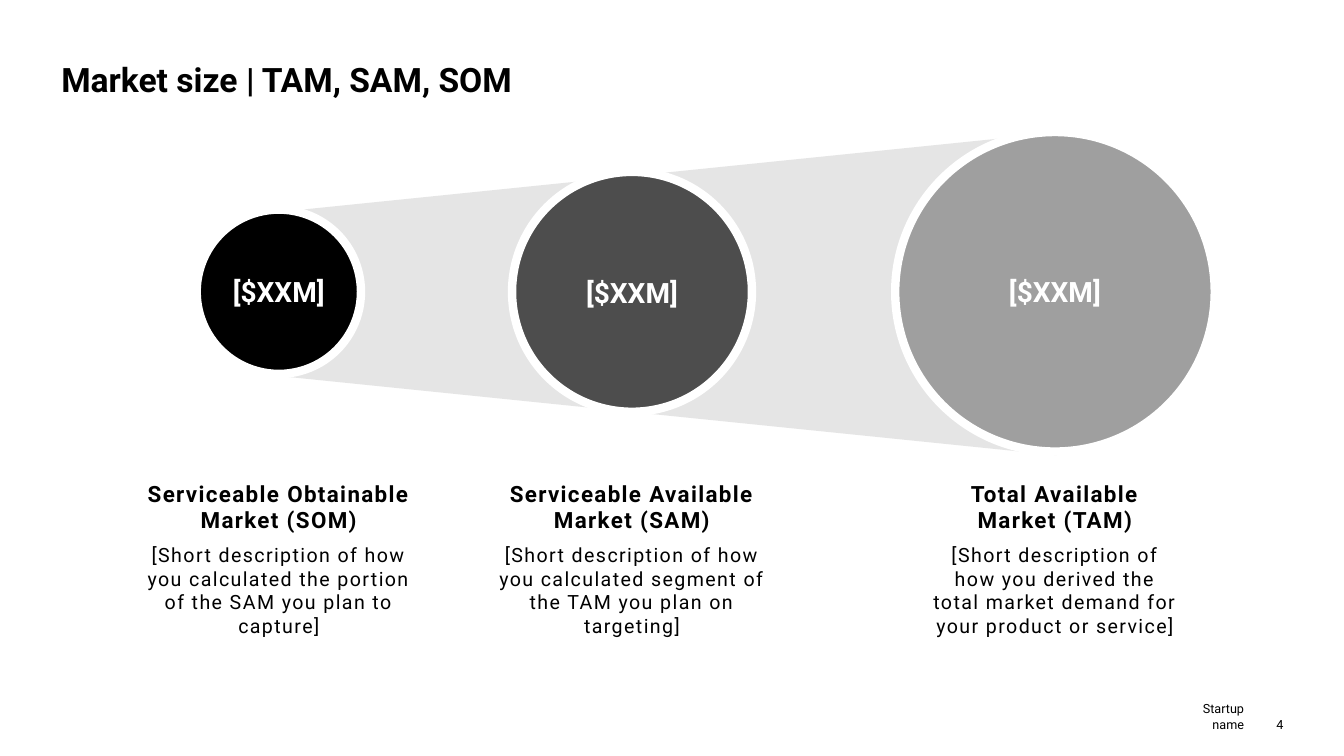
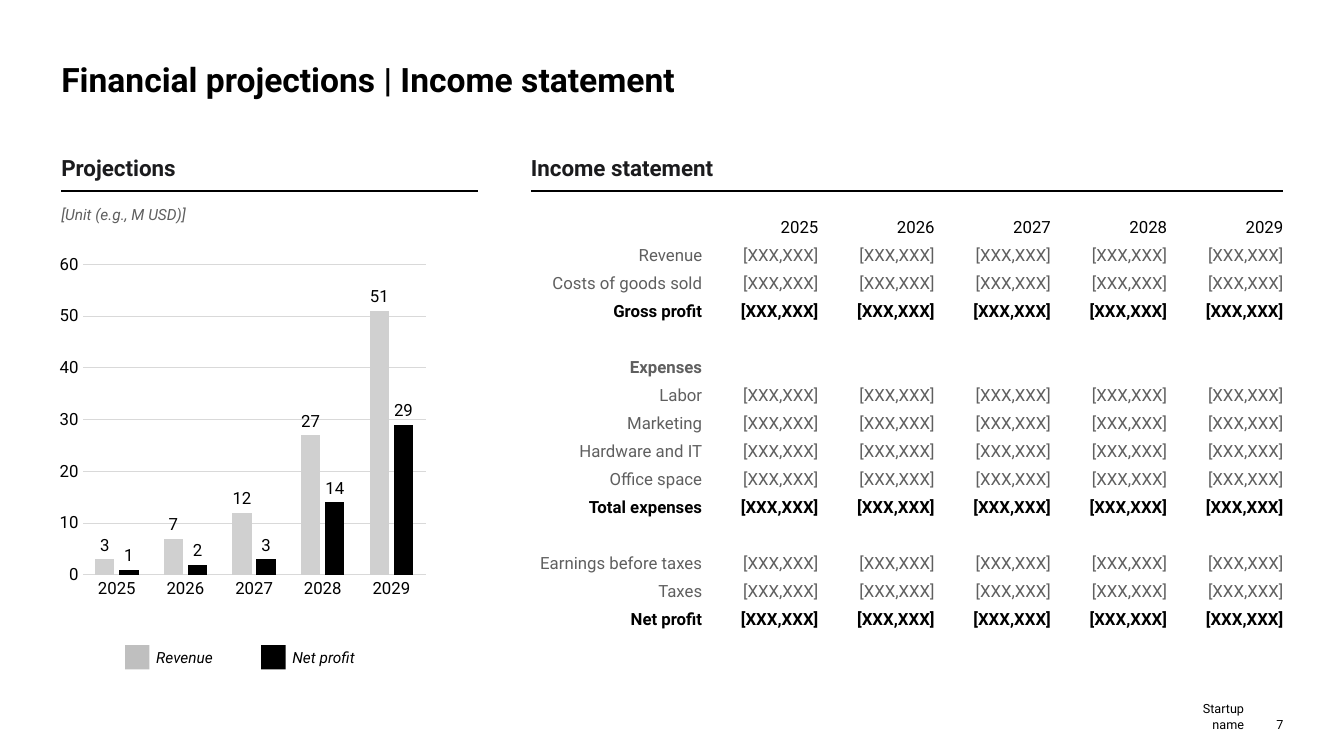
from lxml.etree import SubElement
from pptx import Presentation
from pptx.chart.data import CategoryChartData
from pptx.dml.color import RGBColor
from pptx.enum.chart import XL_CHART_TYPE as ChartType
from pptx.enum.chart import XL_LABEL_POSITION as LabelPosition
from pptx.enum.chart import XL_TICK_MARK as TickMark
from pptx.enum.shapes import MSO_CONNECTOR as Connector
from pptx.enum.shapes import MSO_SHAPE as Shape
from pptx.enum.text import MSO_ANCHOR as Anchor
from pptx.enum.text import PP_ALIGN as Align
from pptx.oxml.ns import qn
from pptx.util import Emu, Pt

COLUMNS, ROWS, CELL = 160, 90, 76200
LEFT, RIGHT = 7.3, 152.8

BLACK = RGBColor(0x00, 0x00, 0x00)
WHITE = RGBColor(0xFF, 0xFF, 0xFF)
INK = RGBColor(0x1B, 0x1B, 0x1D)
CHARCOAL = RGBColor(0x4D, 0x4D, 0x4D)
TEXT_GRAY = RGBColor(0x5F, 0x5F, 0x5F)
MID_GRAY = RGBColor(0x9F, 0x9F, 0x9F)
SWATCH_GRAY = RGBColor(0xBF, 0xBF, 0xBF)
BAR_GRAY = RGBColor(0xD0, 0xD0, 0xD0)
GRID_GRAY = RGBColor(0xD9, 0xD9, 0xD9)
FUNNEL_GRAY = RGBColor(0xE5, 0xE5, 0xE5)

MARKETS = [
    (33.2, 19.56, 32.4, BLACK, "Serviceable Obtainable Market (SOM)",
     "[Short description of how you calculated the portion of the SAM you plan to capture]"),
    (75.24, 28.56, 32.4, CHARCOAL, "Serviceable Available Market (SAM)",
     "[Short description of how you calculated segment of the TAM you plan on targeting]"),
    (125.6, 38.04, 29.5, MID_GRAY, "Total Available Market (TAM)",
     "[Short description of how you derived the total market demand for your product or service]"),
]
YEARS = ["2025", "2026", "2027", "2028", "2029"]
SERIES = [
    ("Revenue", (3, 7, 12, 27, 51), BAR_GRAY, SWATCH_GRAY),
    ("Net profit", (1, 2, 3, 14, 29), BLACK, BLACK),
]
STATEMENT = [
    "Revenue", "Costs of goods sold", "Gross profit", "", "Expenses", "Labor",
    "Marketing", "Hardware and IT", "Office space", "Total expenses", "",
    "Earnings before taxes", "Taxes", "Net profit",
]
TOTALS = {"Gross profit", "Total expenses", "Net profit"}
WITHOUT_AMOUNTS = {"", "Expenses"}


def cells(*values):
    return [Emu(round(value * CELL)) for value in values]


def set_all(target, values):
    for name, value in values.items():
        setattr(target, name, value)


class Deck:
    font = "Roboto"

    def __init__(self):
        self.presentation = Presentation()
        set_all(self.presentation, {"slide_width": Emu(COLUMNS * CELL),
                                    "slide_height": Emu(ROWS * CELL)})
        self.slide = None

    def add_slide(self, title, number):
        self.slide = self.presentation.slides.add_slide(
            self.presentation.slide_layouts[6])
        self.text(LEFT, 4.7, RIGHT - LEFT, 7.06, title,
                  anchor=Anchor.BOTTOM, size=24, bold=True)
        footer = {"anchor": Anchor.BOTTOM, "align": Align.RIGHT, "size": 9}
        self.text(148.5, 83.6, RIGHT - 148.5, 3.5, number, **footer)
        self.text(141.6, 83.6, 6.5, 3.5, "Startup name", **footer)

    def style_font(self, font, size, color=BLACK, bold=False, italic=False):
        set_all(font, {"name": self.font, "size": Pt(size),
                       "bold": bold, "italic": italic})
        font.color.rgb = color

    def add_text(self, paragraph, text, align=Align.LEFT, spacing=0, **style):
        paragraph.alignment = align
        run = paragraph.add_run()
        run.text = text
        self.style_font(run.font, **style)
        if spacing:
            run.font._element.set("spc", str(spacing * 100))

    def prepare(self, shape, anchor):
        frame = shape.text_frame
        set_all(frame, {"word_wrap": True, "vertical_anchor": anchor,
                        "margin_left": 0, "margin_top": 0,
                        "margin_right": 0, "margin_bottom": 0})
        return frame

    def text(self, left, top, width, height, text, anchor=Anchor.TOP, **style):
        box = self.slide.shapes.add_textbox(*cells(left, top, width, height))
        frame = self.prepare(box, anchor)
        self.add_text(frame.paragraphs[0], text, **style)
        return frame

    def shape(self, kind, left, top, width, height, fill, outline=0):
        shape = self.slide.shapes.add_shape(kind, *cells(left, top, width, height))
        shape.shadow.inherit = False
        shape.fill.solid()
        shape.fill.fore_color.rgb = fill
        if outline:
            shape.line.color.rgb = WHITE
            shape.line.width = Pt(outline)
        else:
            shape.line.fill.background()
        return shape

    def circle(self, center_x, center_y, diameter, fill, text):
        circle = self.shape(Shape.OVAL, center_x - diameter / 2,
                            center_y - diameter / 2, diameter, diameter, fill, outline=6)
        frame = self.prepare(circle, Anchor.MIDDLE)
        self.add_text(frame.paragraphs[0], text, align=Align.CENTER,
                      size=20, color=WHITE, bold=True)

    def caption(self, center_x, top, width, heading, description):
        style = {"align": Align.CENTER, "spacing": 1}
        frame = self.text(center_x - width / 2, top, width, 20, heading,
                          size=16, bold=True, **style)
        frame.paragraphs[0].space_after = Pt(6)
        paragraph = frame.add_paragraph()
        paragraph.space_before = Pt(1)
        self.add_text(paragraph, description, size=14, **style)

    def section(self, left, right, heading):
        self.text(left, 17.2, right - left, 4.4, heading,
                  anchor=Anchor.BOTTOM, size=16, color=INK, bold=True)
        rule = self.slide.shapes.add_connector(
            Connector.STRAIGHT, *cells(left, 22.7, right, 22.7))
        rule.line.color.rgb = BLACK
        rule.line.width = Pt(1.25)
        SubElement(rule._element.spPr, qn("a:effectLst"))

    def column_chart(self, left, top, width, height, categories, series):
        data = CategoryChartData()
        data.categories = categories
        for name, values, _, _ in series:
            data.add_series(name, values)
        chart = self.slide.shapes.add_chart(
            ChartType.COLUMN_CLUSTERED, *cells(left, top, width, height), data).chart
        set_all(chart, {"has_legend": False, "has_title": False})
        self.style_font(chart.font, 12)
        plot = chart.plots[0]
        set_all(plot, {"gap_width": 130, "overlap": -25,
                       "vary_by_categories": False, "has_data_labels": True})
        set_all(plot.data_labels, {"show_value": True,
                                   "position": LabelPosition.OUTSIDE_END})
        self.style_font(plot.data_labels.font, 12)
        for bars, (_, _, color, _) in zip(plot.series, series):
            bars.format.fill.solid()
            bars.format.fill.fore_color.rgb = color
        for axis in (chart.category_axis, chart.value_axis):
            set_all(axis, {"major_tick_mark": TickMark.NONE,
                           "minor_tick_mark": TickMark.NONE})
            axis.format.line.fill.background()
            self.style_font(axis.tick_labels.font, 12)
        set_all(chart.value_axis, {"minimum_scale": 0, "maximum_scale": 60,
                                   "major_unit": 10})
        grid = chart.value_axis.major_gridlines.format.line
        grid.color.rgb = GRID_GRAY
        grid.width = Pt(0.75)
        self.place_plot(chart, {"x": 0.06, "y": 0.03, "w": 0.9, "h": 0.87})

    def place_plot(self, chart, shares):
        area = chart._chartSpace.chart.plotArea
        for old in area.findall(qn("c:layout")):
            area.remove(old)
        layout = SubElement(area, qn("c:layout"))
        area.insert(0, layout)
        manual = SubElement(layout, qn("c:manualLayout"))
        settings = {"layoutTarget": "inner", "xMode": "edge", "yMode": "edge", **shares}
        for name, value in settings.items():
            SubElement(manual, qn(f"c:{name}")).set("val", str(value))

    def legend(self, left, top, pitch, series):
        for index, (name, _, _, color) in enumerate(series):
            x = left + index * pitch
            self.shape(Shape.RECTANGLE, x, top, 2.9, 2.9, color)
            self.text(x + 3.7, top, 10, 2.9, name,
                      anchor=Anchor.MIDDLE, size=11, italic=True)

    def table(self, left, top, widths, row_height, rows):
        table = self.slide.shapes.add_table(
            len(rows), len(widths),
            *cells(left, top, sum(widths), row_height * len(rows))).table
        set_all(table, {"first_row": False, "horz_banding": False})
        for column, width in zip(table.columns, widths):
            column.width = cells(width)[0]
        for row, (texts, style) in zip(table.rows, rows):
            row.height = cells(row_height)[0]
            for cell, text in zip(row.cells, texts):
                self.table_cell(cell, text, style)

    def table_cell(self, cell, text, style):
        set_all(cell, {"margin_left": 0, "margin_right": 0,
                       "margin_top": Pt(2.8), "margin_bottom": Pt(2.8),
                       "vertical_anchor": Anchor.MIDDLE})
        cell.fill.background()
        paragraph = cell.text_frame.paragraphs[0]
        if text:
            self.add_text(paragraph, text, align=Align.RIGHT, size=12, **style)
        else:
            SubElement(paragraph._p, qn("a:endParaRPr")).set("sz", "1200")


def statement_rows():
    rows = [([""] + YEARS, {"color": BLACK})]
    for label in STATEMENT:
        amount = "" if label in WITHOUT_AMOUNTS else "[XXX,XXX]"
        style = {"color": BLACK if label in TOTALS else TEXT_GRAY,
                 "bold": label in TOTALS or label == "Expenses"}
        rows.append(([label] + [amount] * len(YEARS), style))
    return rows


def add_market_slide(deck):
    deck.add_slide("Market size | TAM, SAM, SOM", "4")
    funnel = deck.shape(Shape.TRAPEZOID, 59.5, -12.1, 38.4, 94.2, FUNNEL_GRAY)
    funnel.rotation = 270
    for center, diameter, _, color, _, _ in MARKETS:
        deck.circle(center, 34.74, diameter, color, "[$XXM]")
    for center, _, width, _, heading, description in MARKETS:
        deck.caption(center, 57.1, width, heading, description)


def add_finance_slide(deck):
    deck.add_slide("Financial projections | Income statement", "7")
    deck.section(LEFT, 56.9, "Projections")
    deck.text(LEFT, 24.4, 25, 2.4, "[Unit (e.g., M USD)]",
              size=11, color=TEXT_GRAY, italic=True)
    deck.column_chart(7.1, 30.2, 45.4, 42.5, YEARS, SERIES)
    deck.legend(14.9, 76.8, 16.2, SERIES)
    statement_left, label_width = 63.2, 20.4
    year_width = (RIGHT - statement_left - label_width) / len(YEARS)
    deck.section(statement_left, RIGHT, "Income statement")
    deck.table(statement_left, 25.4, [label_width] + [year_width] * len(YEARS),
               3.34, statement_rows())


def main():
    deck = Deck()
    add_market_slide(deck)
    add_finance_slide(deck)
    deck.presentation.save("out.pptx")


if __name__ == "__main__":
    main()
